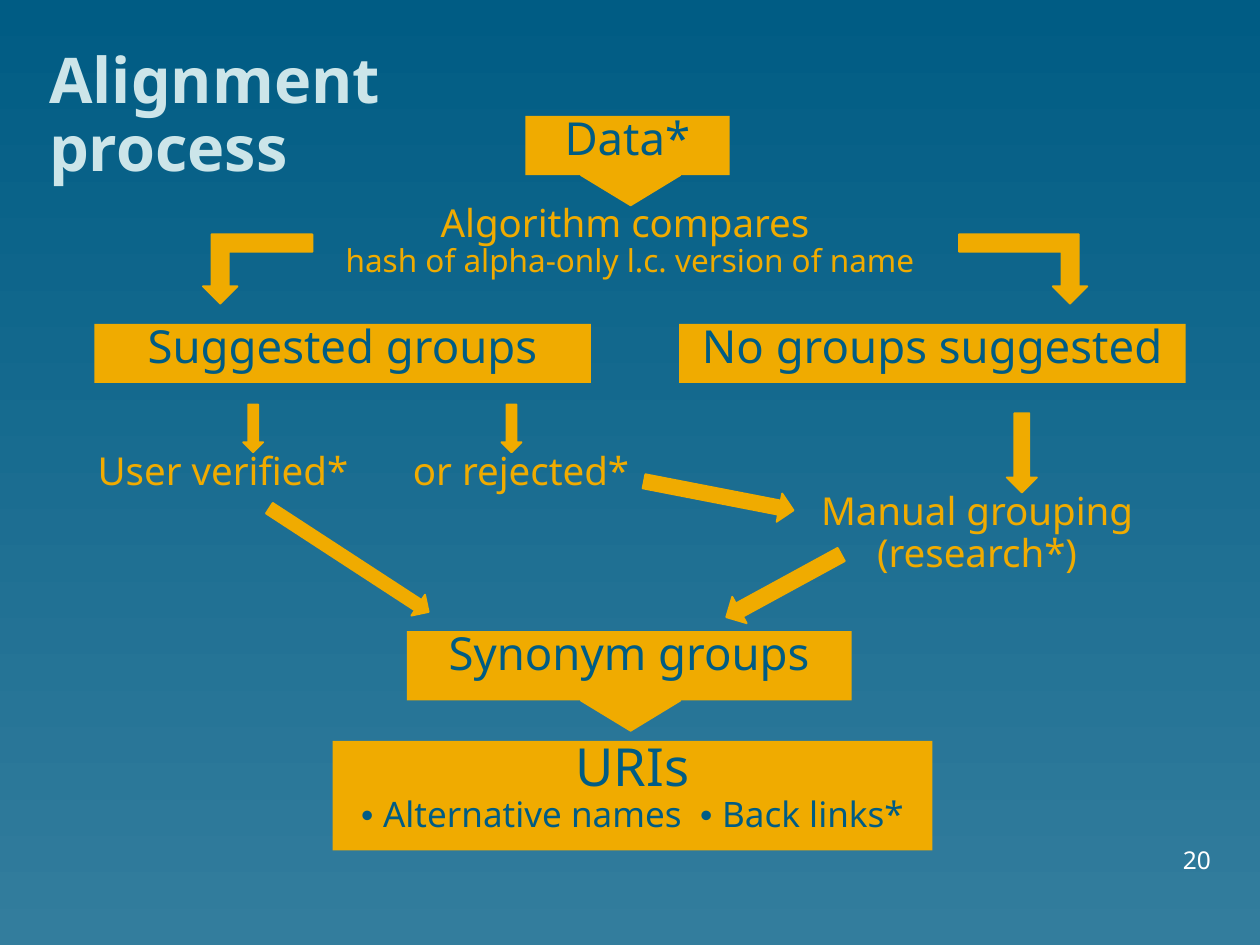
from dataclasses import dataclass

from pptx import Presentation
from pptx.dml.color import RGBColor
from pptx.enum import shapes, text
from pptx.util import Inches, Pt


@dataclass(frozen=True)
class Theme:
    font: str = "Noto Sans"
    bullet_font: str = "Arial"
    amber: RGBColor = RGBColor(0xF0, 0xAB, 0x00)
    deep: RGBColor = RGBColor(0x00, 0x5C, 0x84)
    teal: RGBColor = RGBColor(0x33, 0x7D, 0x9D)
    pale: RGBColor = RGBColor(0xCC, 0xE5, 0xE9)
    white: RGBColor = RGBColor(0xFF, 0xFF, 0xFF)
    title: int = 36
    result: int = 30
    stage: int = 26
    step: int = 22
    detail: int = 20
    note: int = 18
    number: int = 14
    spacing: float = 0.9


THEME = Theme()
SHAPE = shapes.MSO_SHAPE
CENTER = text.PP_ALIGN.CENTER


def inches(box):
    return [Inches(value) for value in box]


def style_runs(para, size, color, bold=False):
    for span in para.runs:
        span.font.name = THEME.font
        span.font.size = Pt(size)
        span.font.bold = bold
        span.font.color.rgb = color


def write(frame, content, size, color, align=CENTER,
          anchor=text.MSO_ANCHOR.TOP, bold=False):
    """Fill a frame with one paragraph; a vertical tab breaks the line."""
    frame.word_wrap = True
    frame.auto_size = text.MSO_AUTO_SIZE.NONE
    frame.vertical_anchor = anchor
    frame.margin_left = frame.margin_right = 0
    frame.margin_top = frame.margin_bottom = 0
    para = frame.paragraphs[0]
    para.text = content
    para.alignment = align
    para.line_spacing = THEME.spacing
    style_runs(para, size, color, bold)
    return para


def add_block(page, kind, box, rotation=0, outlined=True):
    block = page.shapes.add_shape(kind, *inches(box))
    block.shadow.inherit = False
    block.rotation = rotation
    block.fill.solid()
    block.fill.fore_color.rgb = THEME.amber
    if outlined:
        block.line.color.rgb = THEME.amber
        block.line.width = Pt(1)
    else:
        block.line.fill.background()
    return block


def add_stage(page, box, content, size=THEME.stage):
    stage = add_block(page, SHAPE.RECTANGLE, box, outlined=False)
    return write(stage.text_frame, content, size, THEME.deep)


def add_step(page, box, content):
    label = page.shapes.add_textbox(*inches(box))
    return write(label.text_frame, content, THEME.step, THEME.amber)


def add_pointer(page, box):
    add_block(page, SHAPE.ISOSCELES_TRIANGLE, box, rotation=180)


def add_branch(page, box, to_right=False):
    """Draw an elbow arrow that runs sideways and then down."""
    branch = add_block(page, SHAPE.BENT_UP_ARROW, box, rotation=180)
    if to_right:
        branch.element.spPr.xfrm.set("flipH", "1")


def add_arrow(page, box, rotation=0):
    add_block(page, SHAPE.DOWN_ARROW, box, rotation)


def paint_background(page):
    fill = page.background.fill
    fill.gradient()
    fill.gradient_angle = 270
    for stop, color in zip(fill.gradient_stops, (THEME.deep, THEME.teal)):
        stop.color.rgb = color


def place_title(page, box):
    title = page.shapes.title
    title.left, title.top, title.width, title.height = inches(box)
    write(title.text_frame, "Alignment \vprocess", THEME.title, THEME.pale,
          text.PP_ALIGN.LEFT, text.MSO_ANCHOR.BOTTOM, bold=True)


def place_number(page, box):
    label = page.shapes.add_textbox(*inches(box))
    write(label.text_frame, "20", THEME.number, THEME.white,
          text.PP_ALIGN.RIGHT, text.MSO_ANCHOR.BOTTOM)


def place_comparison(page, box):
    """Data, the algorithm below it, and the branches to both outcomes."""
    left, top, width, height = box
    add_stage(page, (left + 3.42, top, 1.62, 0.47), "Data*")
    add_pointer(page, (left + 3.86, top + 0.47, 0.79, 0.24))
    compare = add_step(page, (left + 1.26, top + 0.7, 5.98, 0.94),
                       "Algorithm compares \vhash of alpha-only l.c. version of name")
    compare.runs[1].font.size = Pt(THEME.note)
    add_branch(page, (left + 0.86, top + 0.94, 0.87, 0.55))
    add_branch(page, (left + 6.86, top + 0.94, 1.02, 0.55), to_right=True)
    outcome_top = top + height - 0.47
    add_stage(page, (left, outcome_top, 3.94, 0.47), "Suggested groups")
    add_stage(page, (left + width - 4.02, outcome_top, 4.02, 0.47),
              "No groups suggested")


def place_review(page, box):
    """User decisions and manual grouping, with the arrows between them."""
    left, top, width, height = box
    add_step(page, (left, top + 0.38, 2.2, 0.55), "User verified*")
    add_step(page, (left + 2.52, top + 0.38, 1.89, 0.55), "or rejected*")
    add_step(page, (left + width - 2.83, top + 0.7, 2.83, 0.87),
             "Manual grouping (research*)")
    for offset in (1.26, 3.31):
        add_arrow(page, (left + offset, top, 0.16, 0.38))
    add_arrow(page, (left + 7.32, top + 0.07, 0.24, 0.63))
    add_arrow(page, (left + 2, top + 0.48, 0.2, 1.51), 303.1)
    add_arrow(page, (left + 4.92, top + 0.12, 0.23, 1.21), 281)
    add_arrow(page, (left + 5.43, top + 0.92, 0.24, 1.04), 61.4)


def place_result(page, box):
    left, top, width, height = box
    add_stage(page, (left + 0.59, top, 3.53, 0.55), "Synonym groups")
    add_pointer(page, (left + 1.97, top + 0.55, 0.79, 0.24))
    para = add_stage(page, (left, top + height - 0.87, width, 0.87),
                     "URIs\v", THEME.result)
    for content in ("• ", "Alternative names  ", "• ", "Back links*"):
        span = para.add_run()
        span.text = content
        span.font.name = THEME.bullet_font if content == "• " else THEME.font
        span.font.size = Pt(THEME.detail)
        span.font.color.rgb = THEME.deep


def main():
    deck = Presentation()
    deck.slide_width, deck.slide_height = Inches(10), Inches(7.5)
    page = deck.slides.add_slide(deck.slide_layouts.get_by_name("Title Only"))
    paint_background(page)
    place_title(page, (0.39, 0, 9.22, 1.47))
    place_comparison(page, (0.75, 0.92, 8.66, 2.12))
    place_review(page, (0.67, 3.21, 8.5, 1.99))
    place_result(page, (2.64, 5.01, 4.76, 1.74))
    place_number(page, (7.52, 6.74, 2.09, 0.2))
    deck.save("out.pptx")


if __name__ == "__main__":
    main()
